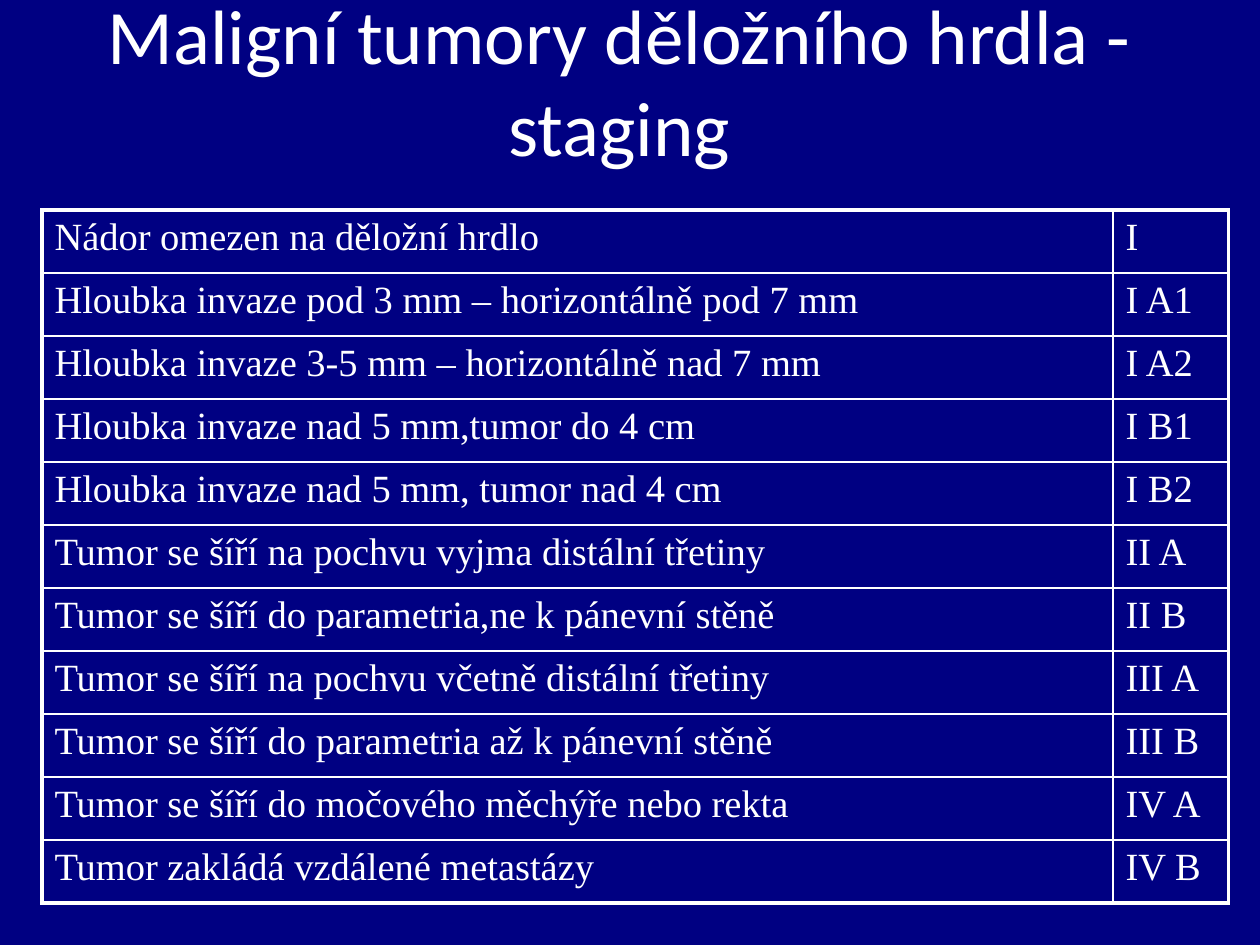
from lxml.etree import SubElement as Sub
from pptx import Presentation
from pptx.dml.color import RGBColor as Rgb
from pptx.enum.text import MSO_ANCHOR as Anchor, MSO_AUTO_SIZE as Fit, PP_ALIGN as Align
from pptx.oxml.ns import qn
from pptx.util import Pt

HUES = {"back": "000082", "ink": "FFFFFF"}
FONTS = {"title": ("Calibri", 44), "cell": ("Times New Roman", 22)}
THICK, THIN = 2.25, 1
STAGES = [
    ("Nádor omezen na děložní hrdlo", "I"),
    ("Hloubka invaze pod 3 mm – horizontálně pod 7 mm", "I A1"),
    ("Hloubka invaze 3-5 mm – horizontálně nad 7 mm", "I A2"),
    ("Hloubka invaze nad 5 mm,tumor do 4 cm", "I B1"),
    ("Hloubka invaze nad 5 mm, tumor nad 4 cm", "I B2"),
    ("Tumor se šíří na pochvu vyjma distální třetiny", "II A"),
    ("Tumor se šíří do parametria,ne k pánevní stěně", "II B"),
    ("Tumor se šíří na pochvu včetně distální třetiny", "III A"),
    ("Tumor se šíří do parametria až k pánevní stěně", "III B"),
    ("Tumor se šíří do močového měchýře nebo rekta", "IV A"),
    ("Tumor zakládá vzdálené metastázy", "IV B"),
]


class Deck:
    """Holds the style and the current slide."""

    def __init__(self, wide, high):
        self.show = Presentation()
        self.show.slide_width, self.show.slide_height = Pt(wide), Pt(high)
        self.slide = self.show.slides.add_slide(self.show.slide_layouts[5])
        fill = self.slide.background.fill
        fill.solid()
        fill.fore_color.rgb = Rgb.from_string(HUES["back"])

    def words(self, para, text, kind):
        run = para.add_run()
        run.text = text
        run.font.name, size = FONTS[kind]
        run.font.size = Pt(size)
        run.font.color.rgb = Rgb.from_string(HUES["ink"])

    def title(self, text, left, top, wide, high):
        box = self.slide.shapes.title
        box.left, box.top, box.width, box.height = map(Pt, (left, top, wide, high))
        frame = box.text_frame
        frame.word_wrap, frame.auto_size = True, Fit.NONE
        frame.vertical_anchor = Anchor.MIDDLE
        para = frame.paragraphs[0]
        para.alignment = Align.CENTER
        self.words(para, text, "title")

    def edge(self, cell, side, width):
        line = Sub(cell._tc.get_or_add_tcPr(), qn(f"a:ln{side}"), w=str(Pt(width)))
        Sub(Sub(line, qn("a:solidFill")), qn("a:srgbClr"), val=HUES["ink"])

    def cell(self, cell, text, outer):
        for side in "LRTB":
            self.edge(cell, side, THICK if outer[side] else THIN)
        cell.fill.background()
        para = cell.text_frame.paragraphs[0]
        gap = Sub(para._p.get_or_add_pPr(), qn("a:spcBef"))
        Sub(gap, qn("a:spcPct"), val="20000")
        self.words(para, text, "cell")

    def table(self, rows, left, top, cols, high):
        last, end = len(rows) - 1, len(cols) - 1
        size = map(Pt, (left, top, sum(cols), high * len(rows)))
        grid = self.slide.shapes.add_table(len(rows), len(cols), *size).table
        grid.first_row = grid.horz_banding = False
        for col, wide in zip(grid.columns, cols):
            col.width = Pt(wide)
        for r, row in enumerate(rows):
            grid.rows[r].height = Pt(high)
            for c, text in enumerate(row):
                outer = {"L": c == 0, "R": c == end, "T": r == 0, "B": r == last}
                self.cell(grid.cell(r, c), text, outer)


def main():
    deck = Deck(720, 540)
    deck.title("Maligní tumory děložního hrdla - staging", 48, -11, 612, 113)
    deck.table(STAGES, 24, 120, (612, 66), 36)
    deck.show.save("out.pptx")


if __name__ == "__main__":
    main()
